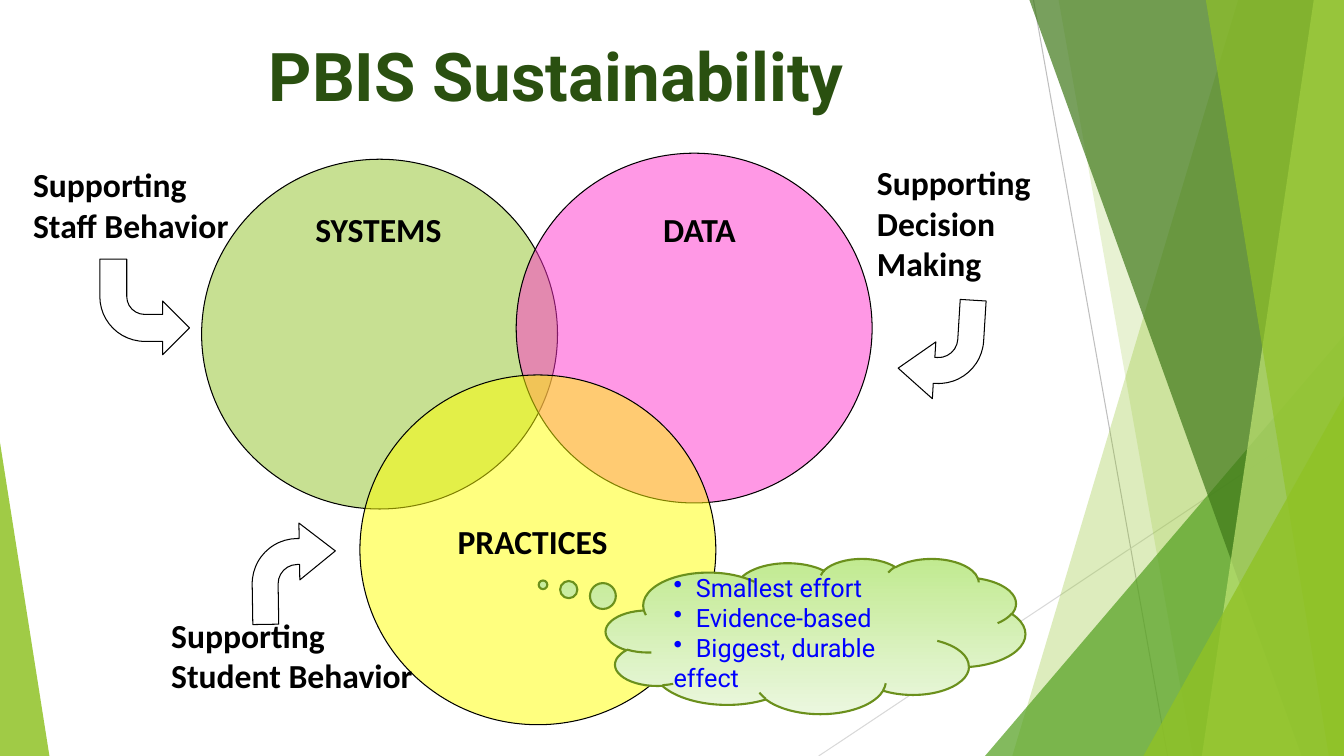
from lxml import etree
from pptx import Presentation
from pptx.dml.color import RGBColor
from pptx.enum.shapes import MSO_CONNECTOR, MSO_SHAPE as SHAPE
from pptx.enum.text import MSO_ANCHOR as ANCHOR, PP_ALIGN as ALIGN
from pptx.oxml.ns import qn
from pptx.util import Pt

PX = 9144  # 100 px to the inch
WIDTH, HEIGHT = 1333, 750

BLACK = "000000"
GREEN = "90C226"
OUTLINE = 0.75


def px(*lengths):
    return [length * PX for length in lengths]


def paint(colour_format, colour):
    colour_format.rgb = RGBColor.from_string(colour)


def fill_solid(shape, colour, opacity):
    """Fill with a colour at an opacity in percent."""
    shape.fill.solid()
    paint(shape.fill.fore_color, colour)
    tint = shape.fill._xPr.find(".//" + qn("a:srgbClr"))
    etree.SubElement(tint, qn("a:alpha")).set("val", str(opacity * 1000))


def outline(shape, colour, width):
    paint(shape.line.color, colour)
    shape.line.width = Pt(width)


def add_preset(page, kind, box, adjustments=()):
    shape = page.shapes.add_shape(kind, *px(*box))
    shape.shadow.inherit = False
    for index, value in enumerate(adjustments):
        shape.adjustments[index] = value
    return shape


def add_triangle(page, box, apex, colour, opacity):
    shape = add_preset(page, SHAPE.ISOSCELES_TRIANGLE, box, [apex])
    fill_solid(shape, colour, opacity)
    shape.line.fill.background()


def add_panel(page, top, bottom, colour, opacity):
    """Fill the page from a slanted left edge to the right border."""
    builder = page.shapes.build_freeform(top, 0, scale=PX)
    builder.add_line_segments([(WIDTH, 0), (WIDTH, HEIGHT), (bottom, HEIGHT)])
    shape = builder.convert_to_shape()
    shape.shadow.inherit = False
    fill_solid(shape, colour, opacity)
    shape.line.fill.background()


def add_line(page, start, end, colour):
    line = page.shapes.add_connector(MSO_CONNECTOR.STRAIGHT, *px(*start, *end))
    outline(line, colour, OUTLINE)
    etree.SubElement(line._element.spPr, qn("a:effectLst"))


def add_circle(page, left, top, colour):
    shape = add_preset(page, SHAPE.OVAL, (left, top, 353, 347))
    fill_solid(shape, colour, 50)
    outline(shape, BLACK, OUTLINE)


def add_bent_arrow(page, box, adjustments, rotation=0, flip=False):
    shape = add_preset(page, SHAPE.BENT_ARROW, box, adjustments)
    shape.fill.background()
    outline(shape, BLACK, OUTLINE)
    shape.rotation = rotation
    if flip:
        shape._element.spPr.xfrm.set("flipV", "1")


def add_bullet(para):
    """Put a bullet in the first line and a tab stop after it."""
    props = para._p.get_or_add_pPr()
    props.set("marL", "0")
    props.set("indent", "0")
    etree.SubElement(props, qn("a:buChar")).set("char", "•")
    stops = etree.SubElement(props, qn("a:tabLst"))
    etree.SubElement(stops, qn("a:tab"), pos=str(22 * PX), algn="l")


def write(shape, lines, size=24, font="Calibri", colour=BLACK, bold=True,
          align=ALIGN.LEFT, anchor=ANCHOR.TOP, wrap=True, bullets=False):
    frame = shape.text_frame
    frame.word_wrap = wrap
    frame.vertical_anchor = anchor
    for index, line in enumerate(lines):
        para = frame.add_paragraph() if index else frame.paragraphs[0]
        para.alignment = align
        if bullets:
            add_bullet(para)
        span = para.add_run()
        span.text = "\t" + line if bullets else line
        span.font.size = Pt(size)
        span.font.name = font
        span.font.bold = bold
        paint(span.font.color, colour)


def add_text(page, box, *lines, **style):
    write(page.shapes.add_textbox(*px(*box)), lines, **style)


def add_backdrop(page):
    add_line(page, (1025, 0), (1158, HEIGHT), "BFBFBF")
    add_line(page, (WIDTH, 403), (812, HEIGHT), "D9D9D9")
    add_panel(page, 1228, 1004, GREEN, 30)
    add_panel(page, 1050, 1183, GREEN, 20)
    add_triangle(page, (977, 333, 356, 417), 1, "54A021", 72)
    add_panel(page, 1021, 1291, "3F7819", 70)
    add_panel(page, 1303, 1192, "C0E474", 70)
    add_panel(page, 1196, 1318, GREEN, 65)
    add_triangle(page, (1134, 393, 199, 357), 1, GREEN, 80)
    add_triangle(page, (0, 439, 49, 311), 0, GREEN, 85)


def add_cloud(page):
    cloud = add_preset(page, SHAPE.CLOUD_CALLOUT, (601, 554, 416, 154),
                       [-0.65, -0.33])
    cloud.fill.gradient()
    cloud.fill.gradient_angle = 270
    for stop, colour in zip(cloud.fill.gradient_stops, ("C1EA90", "EBF7DF")):
        paint(stop.color, colour)
    outline(cloud, "6B901C", 1.5)
    write(cloud, ["Smallest effort", "Evidence-based", "Biggest, durable effect"],
          size=18, font="Roboto", colour="0000FF", bold=False,
          anchor=ANCHOR.MIDDLE, bullets=True)


def main():
    deck = Presentation()
    deck.slide_width, deck.slide_height = px(WIDTH, HEIGHT)
    page = deck.slides.add_slide(deck.slide_layouts[6])

    add_backdrop(page)
    add_text(page, (69, 29, 966, 144), "PBIS Sustainability", size=48,
             font="Roboto", colour="2A5010", align=ALIGN.CENTER)

    add_circle(page, 200, 158, GREEN)
    add_circle(page, 512, 152, "FF33CC")
    add_circle(page, 357, 372, "FFFF00")
    add_text(page, (303, 202, 179, 50), "SYSTEMS")
    add_text(page, (444, 512, 238, 50), "PRACTICES")
    add_text(page, (648, 202, 113, 50), "DATA", wrap=False)

    add_text(page, (23, 158, 246, 90), "Supporting", "Staff Behavior", wrap=False)
    add_bent_arrow(page, (99, 257, 89, 95), (0.3, 0.3, 0.3, 0.5), flip=True)
    add_text(page, (860, 156, 227, 130), "Supporting", "Decision", "Making")
    slim = (0.31, 0.34, 0.43, 0.54)
    add_bent_arrow(page, (892, 296, 83, 100), slim, rotation=183.5)
    add_text(page, (160, 605, 296, 90), "Supporting", "Student Behavior", wrap=False)
    add_bent_arrow(page, (250, 519, 83, 100), slim, rotation=359.1)

    add_cloud(page)
    deck.save("out.pptx")


if __name__ == "__main__":
    main()
